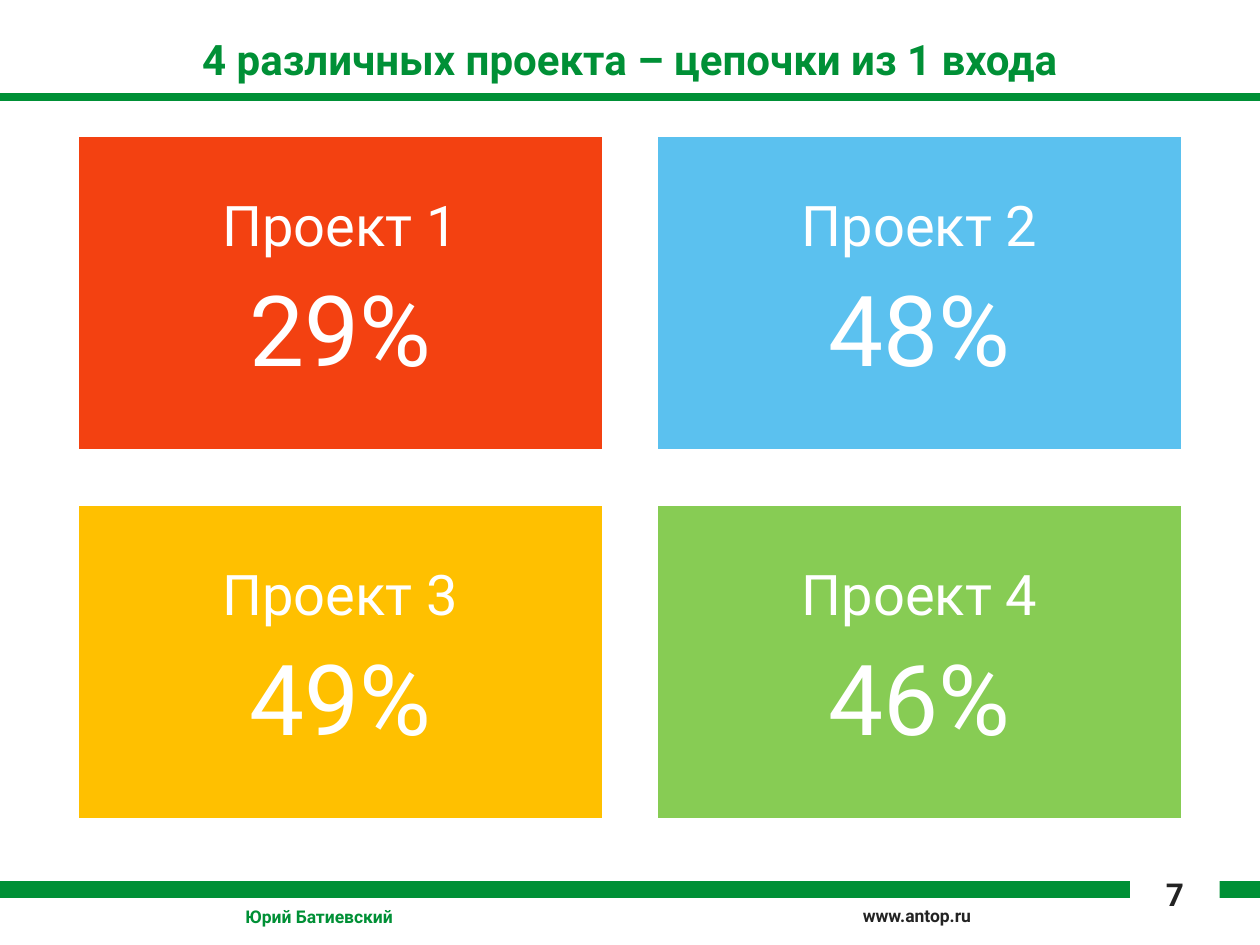
from lxml import etree
from pptx import Presentation
from pptx import util as u
from pptx.dml.color import RGBColor
from pptx.enum import shapes, text
from pptx.oxml.ns import qn

GREEN, DARK, WHITE = "009036", "232323", "FFFFFF"
CARDS = [("Проект 1", "29%", "F34111"), ("Проект 2", "48%", "5BC1EF"),
         ("Проект 3", "49%", "FFC000"), ("Проект 4", "46%", "87CC54")]


def color(value):
    """Turn a hex string into a colour."""
    return RGBColor.from_string(value)


def assign(target, values):
    """Set each attribute named in a dict."""
    for name, value in values.items():
        setattr(target, name, value)


def write(para, words, size, tint, bold=False, **layout):
    """Put formatted words into a paragraph."""
    run = para.add_run()
    run.text = words
    assign(run.font, {"name": "Roboto", "size": u.Pt(size), "bold": bold})
    run.font.color.rgb = color(tint)
    assign(para, layout)


def add_label(slide, box, words, size, tint, **layout):
    """Add a text box with one bold line."""
    label = slide.shapes.add_textbox(*map(u.Inches, box))
    frame = label.text_frame
    frame.word_wrap = True
    write(frame.paragraphs[0], words, size, tint, True, **layout)
    return frame


def add_rule(slide, top, width):
    """Draw a green line across the slide."""
    rule = slide.shapes.add_connector(
        shapes.MSO_CONNECTOR.STRAIGHT, 0, u.Inches(top), u.Inches(10), u.Inches(top))
    rule.line.color.rgb = color(GREEN)
    rule.line.width = u.Pt(width)
    etree.SubElement(rule._element.spPr, qn("a:effectLst"))


def add_block(slide, box, fill):
    """Add a filled rectangle and return it."""
    block = slide.shapes.add_shape(shapes.MSO_SHAPE.RECTANGLE, *map(u.Inches, box))
    block.shadow.inherit = False
    block.fill.solid()
    block.fill.fore_color.rgb = color(fill)
    block.line.fill.background()
    return block


def add_card(slide, left, top, name, share, fill):
    """Add a project card with its name and share."""
    card = add_block(slide, (left, top, 4.18, 2.51), fill)
    card.line.color.rgb = color(WHITE)
    card.line.width = u.Pt(2)
    frame = card.text_frame
    sides = ("left", "top", "right", "bottom")
    assign(frame, {f"margin_{side}": u.Inches(0.13) for side in sides})
    assign(frame, {"word_wrap": True, "vertical_anchor": text.MSO_ANCHOR.MIDDLE})
    layout = {"alignment": text.PP_ALIGN.CENTER, "line_spacing": 0.9,
              "space_after": u.Pt(13)}
    write(frame.paragraphs[0], name, 32, WHITE, **layout)
    write(frame.add_paragraph(), share, 56, WHITE, **layout)


def add_number(slide, number):
    """Add the page number on a white block."""
    block = add_block(slide, (8.97, 6.85, 0.71, 0.65), WHITE)
    frame = block.text_frame
    frame.vertical_anchor = text.MSO_ANCHOR.TOP
    write(frame.paragraphs[0], number, 18, DARK, True,
          alignment=text.PP_ALIGN.CENTER, line_spacing=1.15)


def main():
    """Build and save the slide."""
    deck = Presentation()
    assign(deck, {"slide_width": u.Inches(10), "slide_height": u.Inches(7.5)})
    slide = deck.slides.add_slide(deck.slide_layouts[6])
    add_rule(slide, 7.06, 10)
    add_label(slide, (6.75, 7.13, 2.46, 0.27), "www.antop.ru", 10, DARK)
    add_rule(slide, 0.77, 5)
    title = add_label(slide, (0.51, 0.21, 8.98, 0.51),
                      "4 различных проекта – цепочки из 1 входа", 24, GREEN,
                      alignment=text.PP_ALIGN.CENTER)
    title.vertical_anchor = text.MSO_ANCHOR.MIDDLE
    for index, card in enumerate(CARDS):
        row, col = divmod(index, 2)
        add_card(slide, 0.61 + 4.6 * col, 1.07 + 2.93 * row, *card)
    add_label(slide, (1.85, 7.14, 5.83, 0.24), "Юрий Батиевский", 10, GREEN)
    add_number(slide, "7")
    deck.save("out.pptx")


if __name__ == "__main__":
    main()
